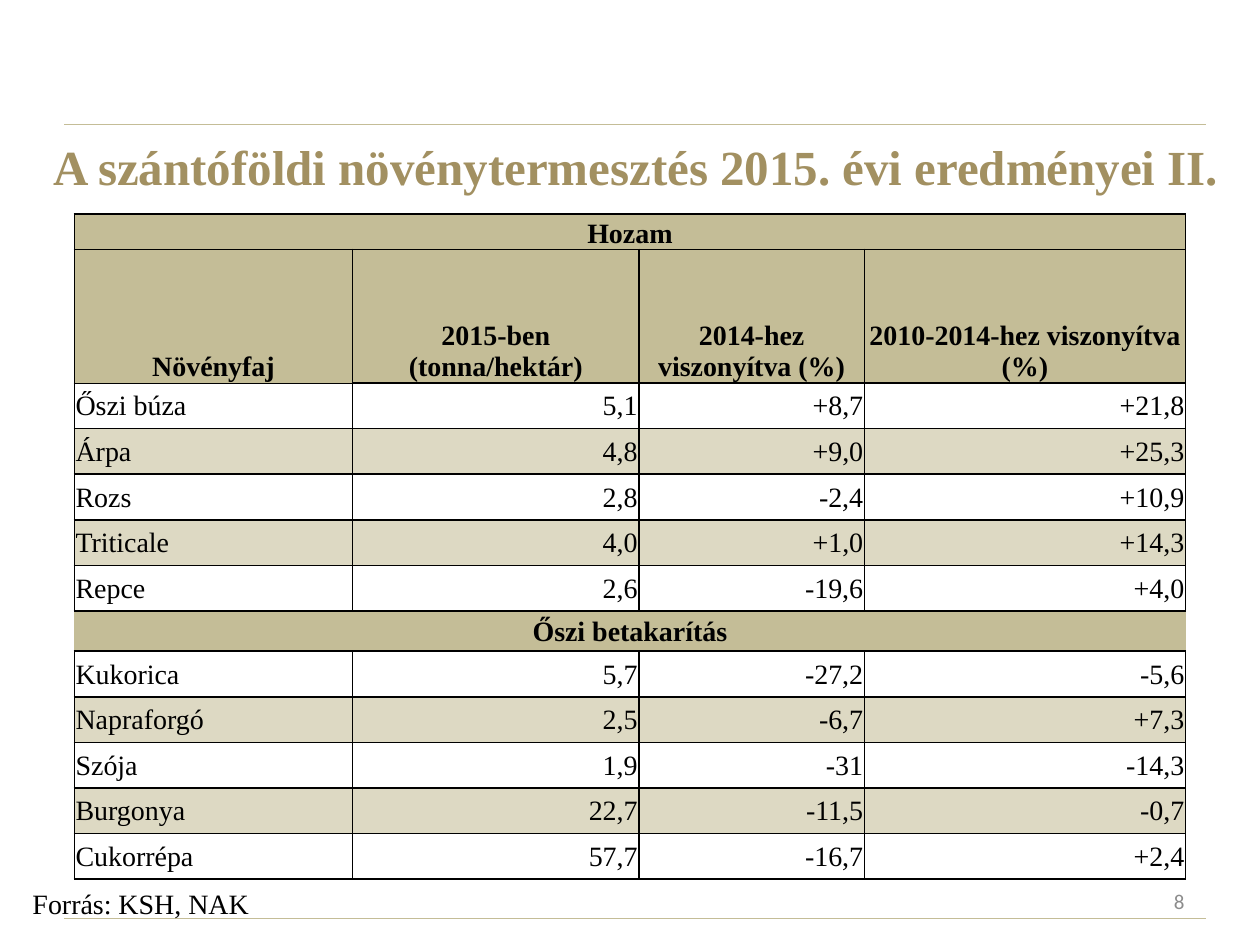
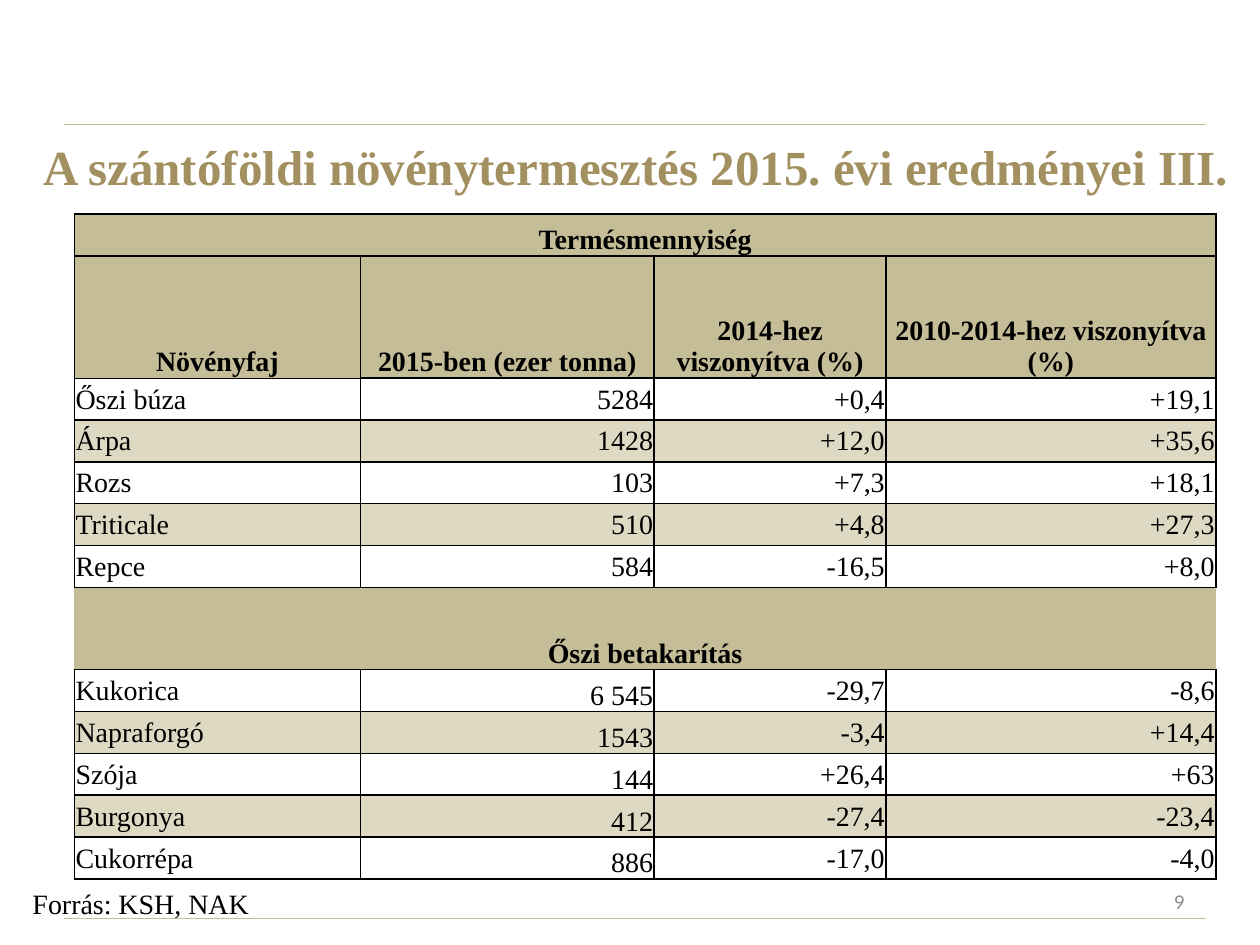
from dataclasses import dataclass

from lxml.etree import SubElement
from pptx import Presentation
from pptx.dml.color import RGBColor
from pptx.enum.shapes import MSO_CONNECTOR
from pptx.enum.text import MSO_ANCHOR, MSO_AUTO_SIZE, PP_ALIGN
from pptx.oxml.ns import qn
from pptx.util import Inches, Pt

SOURCE = "Forrás: KSH, NAK"
SECTION = "Őszi betakarítás"
CROP_HEADING = "Növényfaj"
CHANGE_HEADINGS = ["2014-hez viszonyítva (%)", "2010-2014-hez viszonyítva (%)"]

SLIDES = [
    dict(
        title="A szántóföldi növénytermesztés 2015. évi eredményei II.",
        number="8",
        table_title="Hozam",
        unit_heading="2015-ben (tonna/hektár)",
        table_width=8.82,
        title_height=0.28, heading_height=1.06, section_height=0.32,
        section_anchor=MSO_ANCHOR.MIDDLE,
        autumn_amount_anchor=MSO_ANCHOR.MIDDLE,
        summer=[
            ("Őszi búza", "5,1", "+8,7", "+21,8"),
            ("Árpa", "4,8", "+9,0", "+25,3"),
            ("Rozs", "2,8", "-2,4", "+10,9"),
            ("Triticale", "4,0", "+1,0", "+14,3"),
            ("Repce", "2,6", "-19,6", "+4,0"),
        ],
        autumn=[
            ("Kukorica", "5,7", "-27,2", "-5,6"),
            ("Napraforgó", "2,5", "-6,7", "+7,3"),
            ("Szója", "1,9", "-31", "-14,3"),
            ("Burgonya", "22,7", "-11,5", "-0,7"),
            ("Cukorrépa", "57,7", "-16,7", "+2,4"),
        ],
    ),
    dict(
        title="A szántóföldi növénytermesztés 2015. évi eredményei III.",
        number="9",
        table_title="Termésmennyiség",
        unit_heading="2015-ben (ezer tonna)",
        table_width=9.06,
        title_height=0.33, heading_height=0.97, section_height=0.65,
        section_anchor=MSO_ANCHOR.BOTTOM,
        autumn_amount_anchor=MSO_ANCHOR.BOTTOM,
        summer=[
            ("Őszi búza", "5284", "+0,4", "+19,1"),
            ("Árpa", "1428", "+12,0", "+35,6"),
            ("Rozs", "103", "+7,3", "+18,1"),
            ("Triticale", "510", "+4,8", "+27,3"),
            ("Repce", "584", "-16,5", "+8,0"),
        ],
        autumn=[
            ("Kukorica", "6 545", "-29,7", "-8,6"),
            ("Napraforgó", "1543", "-3,4", "+14,4"),
            ("Szója", "144", "+26,4", "+63"),
            ("Burgonya", "412", "-27,4", "-23,4"),
            ("Cukorrépa", "886", "-17,0", "-4,0"),
        ],
    ),
]


@dataclass(frozen=True)
class Theme:
    serif: str = "Times New Roman"
    sans: str = "Calibri"
    title_color: str = "A29061"
    band: str = "C4BD97"
    stripe: str = "DDD9C3"
    ink: str = "000000"
    muted: str = "8C8C8C"
    title_size: int = 28
    body_size: int = 16
    number_size: int = 12


THEME = Theme()
SLIDE_WIDTH, SLIDE_HEIGHT = 10, 7.5
RULE_LEFT, RULE_RIGHT = 0.51, 9.57
RULE_HEIGHTS = (7.29, 0.99)
TITLE_BOX = (0.2, 0.85, 9.69, 0.94)
SOURCE_BOX = (0.16, 6.99, 1.94, 0.37)
NUMBER_BOX = (7.17, 6.95, 2.33, 0.4)
TABLE_LEFT, TABLE_TOP, TABLE_HEIGHT = 0.59, 1.7, 5.28
COLUMN_PERCENTS = (25.05, 25.75, 20.3, 28.9)
CELL_MARGIN = 0.01
BORDER, THIN_BORDER = 1, 0.5


def write(frame, text, size=THEME.body_size, color=THEME.ink, font=THEME.serif,
          bold=False, align=PP_ALIGN.LEFT):
    paragraph = frame.paragraphs[0]
    paragraph.alignment = align
    run = paragraph.add_run()
    run.text = text
    run.font.name = font
    run.font.size = Pt(size)
    run.font.bold = bold
    run.font.color.rgb = RGBColor.from_string(color)


def add_text(slide, box, text, anchor=MSO_ANCHOR.MIDDLE, wrap=True, **style):
    frame = slide.shapes.add_textbox(*map(Inches, box)).text_frame
    frame.word_wrap = wrap
    frame.vertical_anchor = anchor
    if not wrap:
        frame.auto_size = MSO_AUTO_SIZE.SHAPE_TO_FIT_TEXT
    write(frame, text, **style)


def add_rule(slide, height):
    rule = slide.shapes.add_connector(
        MSO_CONNECTOR.STRAIGHT, Inches(RULE_LEFT), Inches(height),
        Inches(RULE_RIGHT), Inches(height))
    rule.line.color.rgb = RGBColor.from_string(THEME.band)
    rule.line.width = Pt(0.75)
    SubElement(rule.element.spPr, qn("a:effectLst"))


def set_borders(cell, **changes):
    """Draw every side of the cell; a width of 0 leaves that side open."""
    properties = cell._tc.get_or_add_tcPr()
    for side in "LRTB":
        width = changes.get(side, BORDER)
        line = SubElement(properties, qn(f"a:ln{side}"), w=str(Pt(width)))
        if width:
            fill = SubElement(line, qn("a:solidFill"))
            SubElement(fill, qn("a:srgbClr"), val=THEME.ink)
        else:
            SubElement(line, qn("a:noFill"))


def style_cell(cell, fill, anchor, **borders):
    set_borders(cell, **borders)
    if fill:
        cell.fill.solid()
        cell.fill.fore_color.rgb = RGBColor.from_string(fill)
    else:
        cell.fill.background()
    cell.vertical_anchor = anchor
    cell.margin_left = cell.margin_right = cell.margin_top = Inches(CELL_MARGIN)
    cell.margin_bottom = 0


def fill_banner(table, row, text, anchor, **borders):
    """Fill a heading row that spans the whole table."""
    cells = list(table.rows[row].cells)
    for cell in cells:
        style_cell(cell, THEME.band, anchor, **borders)
    cells[0].merge(cells[-1])
    write(cells[0].text_frame, text, bold=True, align=PP_ALIGN.CENTER)


def fill_crops(table, first_row, crops, amount_anchor, first_top=BORDER):
    for index, crop in enumerate(crops):
        fill = THEME.stripe if index % 2 else None
        for column, text in enumerate(crop):
            cell = table.cell(first_row + index, column)
            anchor = amount_anchor if column == 1 else MSO_ANCHOR.MIDDLE
            top = first_top if index == column == 0 else BORDER
            style_cell(cell, fill, anchor, T=top)
            write(cell.text_frame, text,
                  align=PP_ALIGN.RIGHT if column else PP_ALIGN.JUSTIFY)


def add_crop_table(slide, content):
    summer, autumn = content["summer"], content["autumn"]
    fixed = [content[part + "_height"] for part in ("title", "heading", "section")]
    crop_height = (TABLE_HEIGHT - sum(fixed)) / (len(summer) + len(autumn))
    heights = (fixed[:2] + [crop_height] * len(summer)
               + fixed[2:] + [crop_height] * len(autumn))

    table = slide.shapes.add_table(
        len(heights), len(COLUMN_PERCENTS), Inches(TABLE_LEFT), Inches(TABLE_TOP),
        Inches(content["table_width"]), Inches(TABLE_HEIGHT)).table
    table.first_row = table.horz_banding = False
    for column, percent in zip(table.columns, COLUMN_PERCENTS):
        column.width = Inches(content["table_width"] * percent / 100)
    for row, height in zip(table.rows, heights):
        row.height = Inches(height)

    fill_banner(table, 0, content["table_title"], MSO_ANCHOR.BOTTOM)
    headings = [CROP_HEADING, content["unit_heading"], *CHANGE_HEADINGS]
    for column, text in enumerate(headings):
        cell = table.cell(1, column)
        style_cell(cell, THEME.band, MSO_ANCHOR.BOTTOM,
                   B=BORDER if column else THIN_BORDER)
        write(cell.text_frame, text, bold=True, align=PP_ALIGN.CENTER)

    section_row = 2 + len(summer)
    fill_crops(table, 2, summer, MSO_ANCHOR.MIDDLE, first_top=THIN_BORDER)
    fill_banner(table, section_row, SECTION, content["section_anchor"], L=0, R=0)
    fill_crops(table, section_row + 1, autumn, content["autumn_amount_anchor"])


def add_slide(presentation, content):
    slide = presentation.slides.add_slide(presentation.slide_layouts[6])
    for height in RULE_HEIGHTS:
        add_rule(slide, height)
    add_text(slide, TITLE_BOX, content["title"], size=THEME.title_size,
             color=THEME.title_color, bold=True, align=PP_ALIGN.CENTER)
    add_text(slide, SOURCE_BOX, SOURCE, anchor=MSO_ANCHOR.TOP, wrap=False)
    add_crop_table(slide, content)
    add_text(slide, NUMBER_BOX, content["number"], size=THEME.number_size,
             color=THEME.muted, font=THEME.sans, align=PP_ALIGN.RIGHT)


def main():
    presentation = Presentation()
    presentation.slide_width = Inches(SLIDE_WIDTH)
    presentation.slide_height = Inches(SLIDE_HEIGHT)
    for content in SLIDES:
        add_slide(presentation, content)
    presentation.save("out.pptx")


if __name__ == "__main__":
    main()
